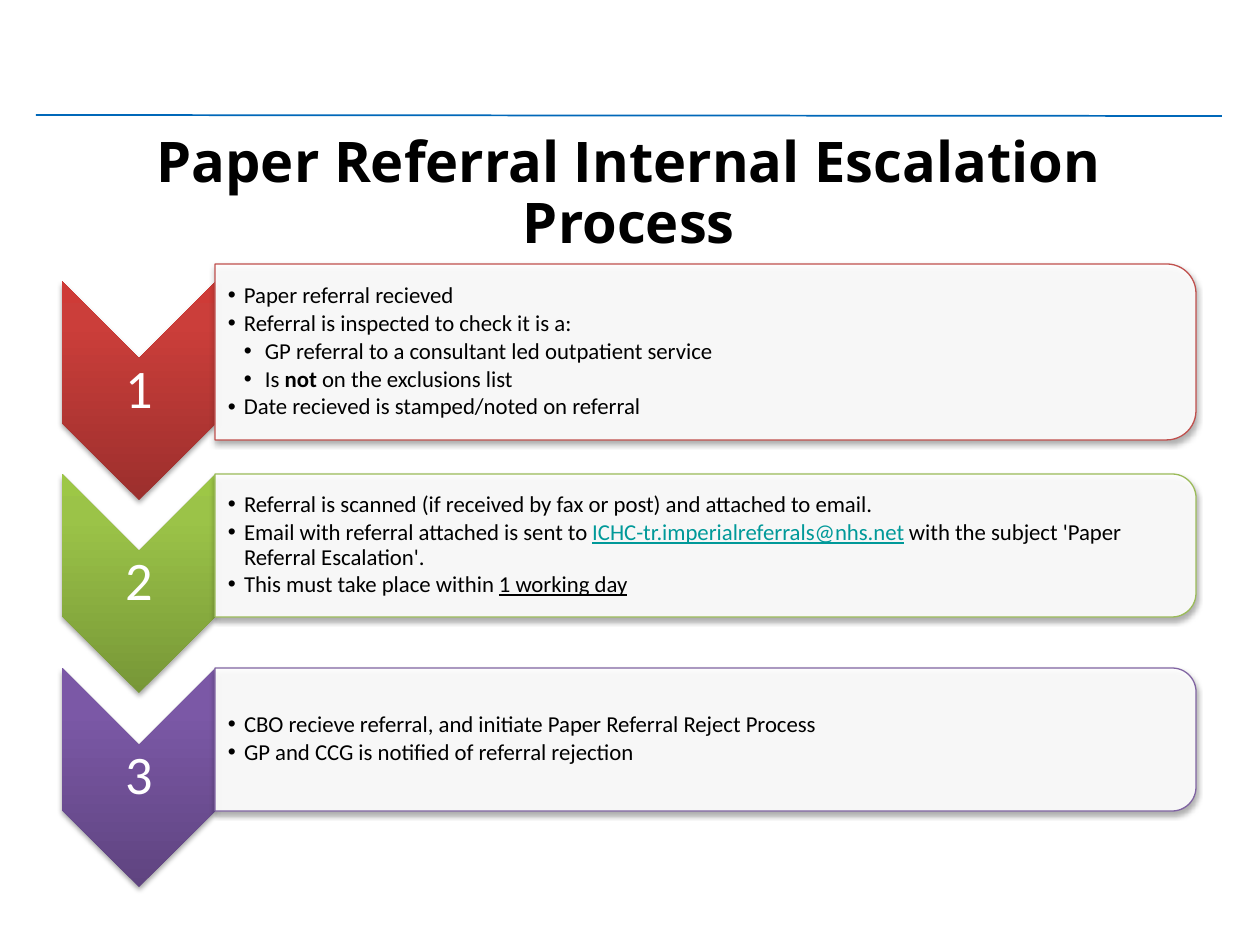
from copy import deepcopy

from lxml import etree
from pptx import Presentation
from pptx.dml.color import RGBColor
from pptx.enum.shapes import MSO_CONNECTOR, MSO_SHAPE
from pptx.enum.text import MSO_ANCHOR, PP_ALIGN
from pptx.oxml.ns import qn
from pptx.util import Emu, Pt

STRAIGHT = MSO_CONNECTOR.STRAIGHT
CHEVRON = MSO_SHAPE.CHEVRON
ROUNDED_BOX = MSO_SHAPE.ROUND_2_SAME_RECTANGLE
MIDDLE = MSO_ANCHOR.MIDDLE
CENTER = PP_ALIGN.CENTER

PX_PER_INCH = 126
TITLE_FONT = dict(name="Open Sans", size=Pt(32), bold=True, color="000000")
NUMBER_FONT = dict(name="Calibri", size=Pt(31), color="FFFFFF")
BODY_FONT = dict(name="Calibri", size=Pt(13), color="000000")
BOLD = dict(bold=True)
UNDERLINED = dict(underline=True)
ADDRESS = dict(underline=True, color="009999")

# Left margin and hanging indent of each bullet level
BULLET_INDENTS = {1: (16, -16), 2: (37, -21)}

CHEVRON_LEFT, CHEVRON_WIDTH, CHEVRON_HEIGHT = 62, 154, 219
BOX_LEFT, BOX_WIDTH = 215, 981
NUMBER_HEIGHT = 65

# Each bullet is a level and its runs; a run is a text and its format changes.
STEPS = [
    dict(top=281, box_top=264, box_height=176, line="C0504D",
         gradient=("9C2F2D", "CB3E3A", "CE3B37"),
         bullets=[
             (1, [("Paper referral recieved", {})]),
             (1, [("Referral is inspected to check it is a:", {})]),
             (2, [("GP referral to a consultant led outpatient service", {})]),
             (2, [("Is ", {}), ("not", BOLD), (" on the exclusions list", {})]),
             (1, [("Date recieved is stamped/noted on referral", {})]),
         ]),
    dict(top=474, box_top=474, box_height=143, line="9BBB59",
         gradient=("779737", "9BC348", "9DC746"),
         bullets=[
             (1, [("Referral is scanned (if received by fax or post) and attached to email.", {})]),
             (1, [("Email with referral attached is sent to ", {}),
                  ("ICHC-tr.imperialreferrals@nhs.net", ADDRESS),
                  (" with the subject 'Paper Referral Escalation'.", {})]),
             (1, [("This must take place within ", {}), ("1 working day", UNDERLINED)]),
         ]),
    dict(top=668, box_top=668, box_height=143, line="8064A2",
         gradient=("5F4480", "7B58A6", "7C57A8"),
         bullets=[
             (1, [("CBO recieve referral, and initiate Paper Referral Reject Process", {})]),
             (1, [("GP and CCG is notified of referral rejection", {})]),
         ]),
]


def px(length):
    return Emu(round(length * 914400 / PX_PER_INCH))


def rgb(color):
    return RGBColor.from_string(color)


def set_values(target, values):
    for name, value in values.items():
        if name == "color":
            target.color.rgb = rgb(value)
        else:
            setattr(target, name, value)


def set_frame(text_frame, *margins):
    """Margins run left, top, right, bottom."""
    sides = ("margin_left", "margin_top", "margin_right", "margin_bottom")
    values = dict(zip(sides, map(px, margins)))
    set_values(text_frame, dict(values, word_wrap=True, vertical_anchor=MIDDLE))


class SlideBuilder:
    def __init__(self, presentation):
        self.slide = presentation.slides.add_slide(presentation.slide_layouts[5])
        self.shapes = self.slide.shapes

    def title(self, text, left, top, width, height):
        title = self.shapes.title
        set_values(title, dict(left=px(left), top=px(top), width=px(width), height=px(height)))
        set_frame(title.text_frame, 5, 5, 5, 5)
        paragraph = title.text_frame.paragraphs[0]
        set_values(paragraph, dict(alignment=CENTER, line_spacing=0.9))
        self.run(paragraph, text, TITLE_FONT)

    def rule(self, start_x, start_y, end_x, end_y, color):
        line = self.shapes.add_connector(STRAIGHT, px(start_x), px(start_y), px(end_x), px(end_y))
        set_values(line.line, dict(color=color, width=Pt(1)))
        etree.SubElement(line._element.spPr, qn("a:effectLst"))

    def turned_shape(self, kind, left, top, width, height):
        """Add a shape turned by 90 degrees that covers the given area."""
        shift = (width - height) / 2
        shape = self.shapes.add_shape(kind, px(left + shift), px(top - shift), px(height), px(width))
        shape.rotation = 90
        shape.shadow.inherit = False
        effects = shape._element.spPr.find(qn("a:effectLst"))
        shadow = etree.SubElement(effects, qn("a:outerShdw"), blurRad=str(Pt(3.1)),
                                  dist=str(Pt(1.8)), dir="5400000", rotWithShape="0")
        color = etree.SubElement(shadow, qn("a:srgbClr"), val="000000")
        etree.SubElement(color, qn("a:alpha"), val="35000")
        return shape

    def chevron(self, left, top, width, height, colors):
        shape = self.turned_shape(CHEVRON, left, top, width, height)
        shape.line.fill.background()
        shape.fill.gradient()
        shape.fill.gradient_angle = 90
        gradient = shape._element.spPr.find(qn("a:gradFill"))
        gradient.set("rotWithShape", "0")
        stop_list = gradient.find(qn("a:gsLst"))
        stop_list.append(deepcopy(stop_list[0]))
        for stop, position, color in zip(shape.fill.gradient_stops, (0, 0.8, 1), colors):
            set_values(stop, dict(position=position, color=color))

    def box(self, left, top, width, height, line_color):
        shape = self.turned_shape(ROUNDED_BOX, left, top, width, height)
        shape.fill.solid()
        shape.fill.fore_color.rgb = rgb("FFFFFF")
        color = shape._element.spPr.find(qn("a:solidFill"))[0]
        etree.SubElement(color, qn("a:alpha"), val="90000")
        set_values(shape.line, dict(color=line_color, width=Pt(0.75)))

    def text_frame(self, left, top, width, height, margins):
        box = self.shapes.add_textbox(px(left), px(top), px(width), px(height))
        set_frame(box.text_frame, *margins)
        return box.text_frame

    def run(self, paragraph, text, values):
        run = paragraph.add_run()
        run.text = text
        set_values(run.font, values)

    def number(self, text, left, top, width, height):
        paragraph = self.text_frame(left, top, width, height, (2, 2, 2, 2)).paragraphs[0]
        set_values(paragraph, dict(alignment=CENTER, line_spacing=0.9))
        self.run(paragraph, text, NUMBER_FONT)

    def bullets(self, items, left, top, width, height):
        frame = self.text_frame(left, top, width, height, (13, 1, 1, 1))
        for index, (level, runs) in enumerate(items):
            paragraph = frame.add_paragraph() if index else frame.paragraphs[0]
            set_values(paragraph, dict(level=level, line_spacing=0.9, space_after=Pt(1.8)))
            margin, indent = BULLET_INDENTS[level]
            properties = paragraph._p.get_or_add_pPr()
            properties.set("marL", str(px(margin)))
            properties.set("indent", str(px(indent)))
            etree.SubElement(properties, qn("a:buFont"), typeface="Arial")
            etree.SubElement(properties, qn("a:buChar"), char="•")
            for text, changes in runs:
                self.run(paragraph, text, {**BODY_FONT, **changes})


def main():
    presentation = Presentation()
    presentation.slide_width, presentation.slide_height = px(1260), px(945)
    builder = SlideBuilder(presentation)
    builder.rule(36, 115, 1222, 116, "0068B9")
    builder.title("Paper Referral Internal Escalation Process", 62, 116, 1134, 158)
    for number, step in enumerate(STEPS, 1):
        top, box_top, box_height = step["top"], step["box_top"], step["box_height"]
        builder.chevron(CHEVRON_LEFT, top, CHEVRON_WIDTH, CHEVRON_HEIGHT, step["gradient"])
        builder.number(str(number), CHEVRON_LEFT, top + CHEVRON_WIDTH // 2,
                       CHEVRON_WIDTH, NUMBER_HEIGHT)
        builder.box(BOX_LEFT, box_top, BOX_WIDTH, box_height, step["line"])
        inset = box_height // 20
        builder.bullets(step["bullets"], BOX_LEFT, box_top + inset,
                        BOX_WIDTH - inset, box_height - 2 * inset)
    presentation.save("out.pptx")


if __name__ == "__main__":
    main()
